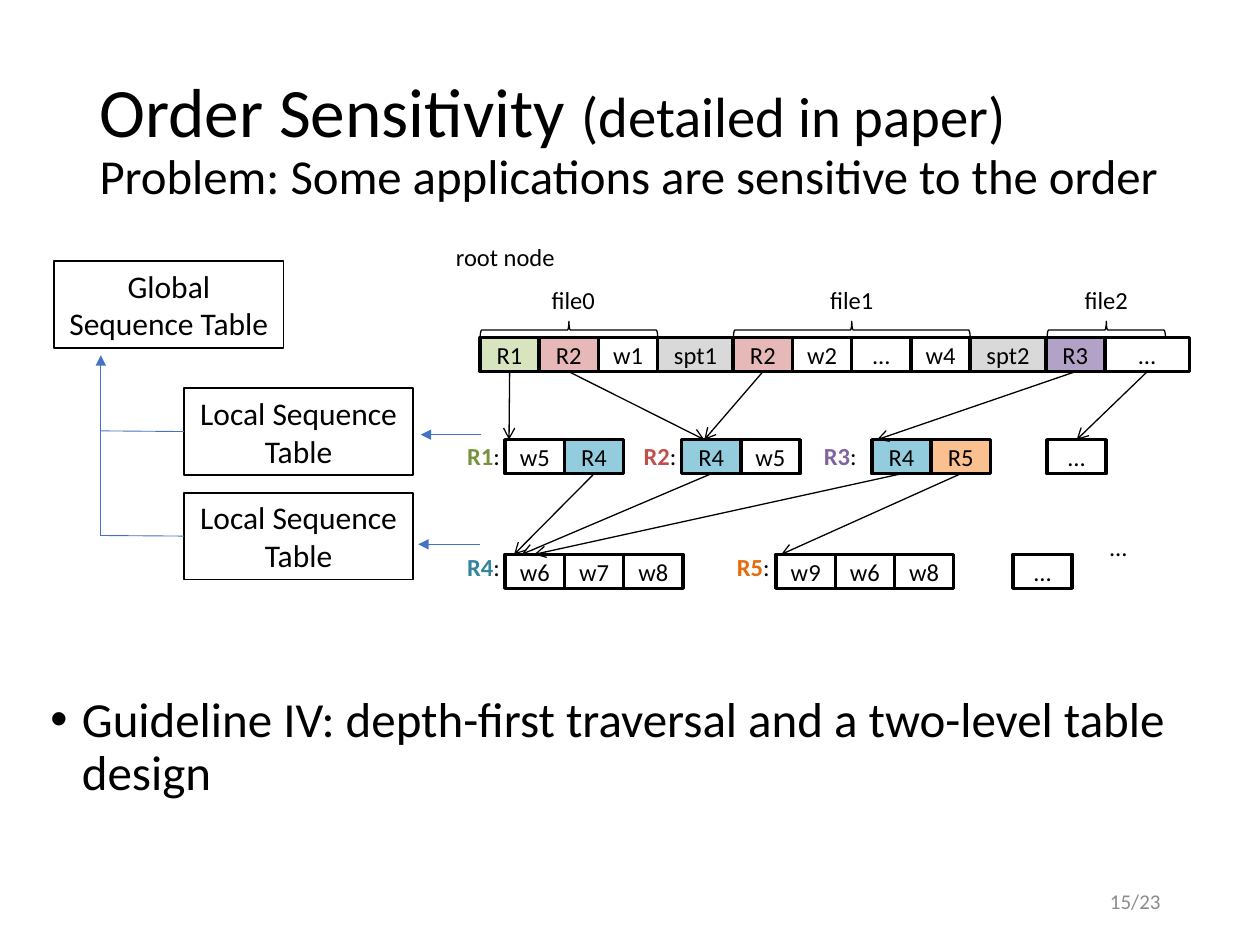
from lxml import etree
from pptx import Presentation
from pptx import util as u
from pptx.dml.color import RGBColor
from pptx.enum import shapes, text
from pptx.oxml.ns import qn

FONT = "Calibri"
BLACK = RGBColor(0x00, 0x00, 0x00)
WHITE = RGBColor(0xFF, 0xFF, 0xFF)
GREY = RGBColor(0xD9, 0xD9, 0xD9)
PAGE_GREY = RGBColor(0x8C, 0x8C, 0x8C)
BLUE = RGBColor(0x44, 0x72, 0xC4)
# Node fills and the stronger tones of their labels
GREEN, DARK_GREEN = RGBColor(0xD7, 0xE4, 0xBD), RGBColor(0x77, 0x93, 0x3C)
PINK, RED = RGBColor(0xE6, 0xB9, 0xB8), RGBColor(0xC0, 0x50, 0x4D)
LILAC, PURPLE = RGBColor(0xB3, 0xA2, 0xC7), RGBColor(0x80, 0x64, 0xA2)
AQUA, TEAL = RGBColor(0x93, 0xCD, 0xDD), RGBColor(0x31, 0x85, 0x9C)
PEACH, ORANGE = RGBColor(0xFA, 0xC0, 0x90), RGBColor(0xE4, 0x6C, 0x0A)

FILLS = {"R1": GREEN, "R2": PINK, "R3": LILAC, "R4": AQUA, "R5": PEACH,
         "spt1": GREY, "spt2": GREY}
CELL_W, CELL_H, SPLIT_W, LAST_W = 0.47, 0.27, 0.6, 0.67
ROOT_Y, MIDDLE_Y, LEAF_Y = 2.68, 3.49, 4.4
BOTTOM, LEFT, TOP = 2, 1, 0


def format_run(run, size, color=BLACK, bold=False):
    run.font.name = FONT
    run.font.size = u.Pt(size)
    run.font.color.rgb = color
    run.font.bold = bold


def add_box(slide, label, left, top, width, height, size, fill, line_width, inset):
    box = slide.shapes.add_shape(shapes.MSO_SHAPE.RECTANGLE, u.Inches(left),
                                 u.Inches(top), u.Inches(width), u.Inches(height))
    box.shadow.inherit = False
    box.fill.solid()
    box.fill.fore_color.rgb = fill
    box.line.color.rgb = BLACK
    box.line.width = u.Pt(line_width)
    frame = box.text_frame
    frame.margin_left = frame.margin_right = u.Inches(inset)
    frame.margin_top = frame.margin_bottom = 0
    frame.vertical_anchor = text.MSO_ANCHOR.MIDDLE
    frame.text = label
    frame.paragraphs[0].alignment = text.PP_ALIGN.CENTER
    format_run(frame.paragraphs[0].runs[0], size)
    return box


def add_node(slide, left, top, labels, widths=None):
    """A row of touching cells."""
    cells = []
    for label, width in zip(labels, widths or [CELL_W] * len(labels)):
        cells.append(add_box(slide, label, left, top, width, CELL_H, 14,
                             FILLS.get(label, WHITE), 2, 0))
        left += width
    return cells


def add_table_box(slide, label, left, top):
    return add_box(slide, label, left, top, 1.82, 0.69, 18, WHITE, 1, 0.1)


def add_label(slide, parts, left, top, width=0.6, height=0.33, size=14):
    """A text box whose parts are (words, colour, bold)."""
    box = slide.shapes.add_textbox(u.Inches(left), u.Inches(top),
                                   u.Inches(width), u.Inches(height))
    frame = box.text_frame
    frame.word_wrap = True
    frame.margin_right = 0
    for words, color, bold in parts:
        run = frame.paragraphs[0].add_run()
        run.text = words
        format_run(run, size, color, bold)
    return box


def add_line(slide, start, end, color=BLACK, width=0.75, head=None):
    line = slide.shapes.add_connector(shapes.MSO_CONNECTOR.STRAIGHT,
                                      *(u.Inches(v) for v in start + end))
    line.line.color.rgb = color
    line.line.width = u.Pt(width)
    if head:
        etree.SubElement(line.line._get_or_add_ln(), qn("a:tailEnd"), type=head)
    etree.SubElement(line._element.spPr, qn("a:effectLst"))
    return line


def add_pointer(slide, cell, end):
    """An arrow from the bottom of a cell to a child node."""
    pointer = add_line(slide, (0, 0), end, head="arrow")
    pointer.begin_connect(cell, BOTTOM)
    return pointer


def add_brace(slide, left, width):
    """An upright brace turned to lie over the root cells."""
    depth, middle_y = 0.14, 2.62
    brace = slide.shapes.add_shape(
        shapes.MSO_SHAPE.LEFT_BRACE, u.Inches(left + width / 2 - depth / 2),
        u.Inches(middle_y - width / 2), u.Inches(depth), u.Inches(width))
    brace.rotation = 90
    brace.shadow.inherit = False
    brace.fill.background()
    brace.line.color.rgb = BLACK
    brace.line.width = u.Pt(0.75)


def place(holder, left, top, width, height, words, anchor):
    holder.left, holder.top = u.Inches(left), u.Inches(top)
    holder.width, holder.height = u.Inches(width), u.Inches(height)
    frame = holder.text_frame
    frame.text = words
    frame.auto_size = text.MSO_AUTO_SIZE.NONE
    frame.vertical_anchor = anchor
    paragraph = frame.paragraphs[0]
    paragraph.alignment = text.PP_ALIGN.LEFT
    paragraph.line_spacing = 0.9
    return paragraph


def add_heading_and_guideline(slide):
    heading = place(slide.shapes.title, 0.69, 0.4, 8.62, 1.45,
                    "Order Sensitivity ", text.MSO_ANCHOR.MIDDLE)
    heading.add_run().text = "(detailed in paper)"
    heading.add_line_break()
    heading.add_run().text = "Problem: Some applications are sensitive to the order"
    for run, size in zip(heading.runs, (39.6, 32.4, 27.9)):
        format_run(run, size)

    guideline = place(slide.placeholders[1], 0.3, 5.47, 9.19, 4.26,
                      "Guideline IV: depth-first traversal and a two-level table design",
                      text.MSO_ANCHOR.TOP)
    guideline.space_before = u.Pt(10)
    format_run(guideline.runs[0], 28)
    properties = guideline._p.get_or_add_pPr()
    properties.set("marL", str(u.Inches(0.25)))
    properties.set("indent", str(u.Inches(-0.25)))
    etree.SubElement(properties, qn("a:buChar"), char="•")


def add_tree(slide):
    # Root node with its files
    root = add_node(slide, 3.81, ROOT_Y,
                    ["R1", "R2", "w1", "spt1", "R2", "w2", "…", "w4", "spt2", "R3", "…"],
                    [CELL_W] * 3 + [SPLIT_W] + [CELL_W] * 4 + [SPLIT_W, CELL_W, LAST_W])
    add_label(slide, [("root node", BLACK, False)], 3.52, 1.87, 2.28)
    for name, left, width, label_left in (("file0", 3.81, 1.41, 4.28),
                                          ("file1", 5.82, 1.88, 6.49),
                                          ("file2", 8.31, 0.94, 8.51)):
        add_brace(slide, left, width)
        add_label(slide, [(name, BLACK, False)], label_left, 2.21)

    # Middle and leaf nodes
    r1 = add_node(slide, 4.01, MIDDLE_Y, ["w5", "R4"])
    r2 = add_node(slide, 5.41, MIDDLE_Y, ["R4", "w5"])
    r3 = add_node(slide, 6.92, MIDDLE_Y, ["R4", "R5"])
    more = add_node(slide, 8.31, MIDDLE_Y, ["…"])
    add_node(slide, 4.01, LEAF_Y, ["w6", "w7", "w8"])
    add_node(slide, 6.16, LEAF_Y, ["w9", "w6", "w8"])
    add_node(slide, 8.04, LEAF_Y, ["…"])
    add_label(slide, [("…", BLACK, False)], 8.71, 4.17)
    for name, color, left, top in (("R1", DARK_GREEN, 3.61, 3.45), ("R2", RED, 5.01, 3.45),
                                   ("R3", PURPLE, 6.44, 3.45), ("R4", TEAL, 3.61, 4.33),
                                   ("R5", ORANGE, 5.75, 4.33)):
        add_label(slide, [(name, color, True), (":", BLACK, False)], left, top, CELL_W)

    # Pointers between the levels
    for cell, x in ((root[0], 4.04), (root[1], 5.59), (root[4], 5.59), (root[9], 6.96)):
        add_pointer(slide, cell, (x, MIDDLE_Y))
    add_pointer(slide, root[10], (8.54, MIDDLE_Y)).end_connect(more[0], TOP)
    for cell, x in ((r1[1], 4.08), (r2[0], 4.14), (r3[0], 4.24), (r3[1], 6.2)):
        add_pointer(slide, cell, (x, LEAF_Y))


def add_sequence_tables(slide):
    trunk_x = 0.8
    add_table_box(slide, "Global Sequence Table", 0.43, 2.07)
    add_line(slide, (trunk_x, 4.25), (trunk_x, 2.82), BLUE, 0.5, "triangle")
    for top in (3.08, 3.91):
        local = add_table_box(slide, "Local Sequence Table", 1.46, top)
        branch = add_line(slide, (1.46, top + 0.34), (trunk_x, top + 0.34), BLUE, 0.5)
        branch.begin_connect(local, LEFT)
    for start_x, end_x, y in ((3.82, 3.34, 3.45), (3.81, 3.32, 4.32)):
        add_line(slide, (start_x, y), (end_x, y), BLUE, 0.5, "triangle")


def main():
    deck = Presentation()
    deck.slide_width, deck.slide_height = u.Inches(10), u.Inches(7.5)
    slide = deck.slides.add_slide(deck.slide_layouts[1])
    add_heading_and_guideline(slide)
    add_tree(slide)
    add_sequence_tables(slide)
    # Page number
    page = add_label(slide, [("15/23", PAGE_GREY, False)], 7.06, 6.95, 2.25, 0.4, 12)
    page.text_frame.margin_right = u.Inches(0.1)
    page.text_frame.vertical_anchor = text.MSO_ANCHOR.MIDDLE
    page.text_frame.paragraphs[0].alignment = text.PP_ALIGN.RIGHT
    deck.save("out.pptx")


if __name__ == "__main__":
    main()
